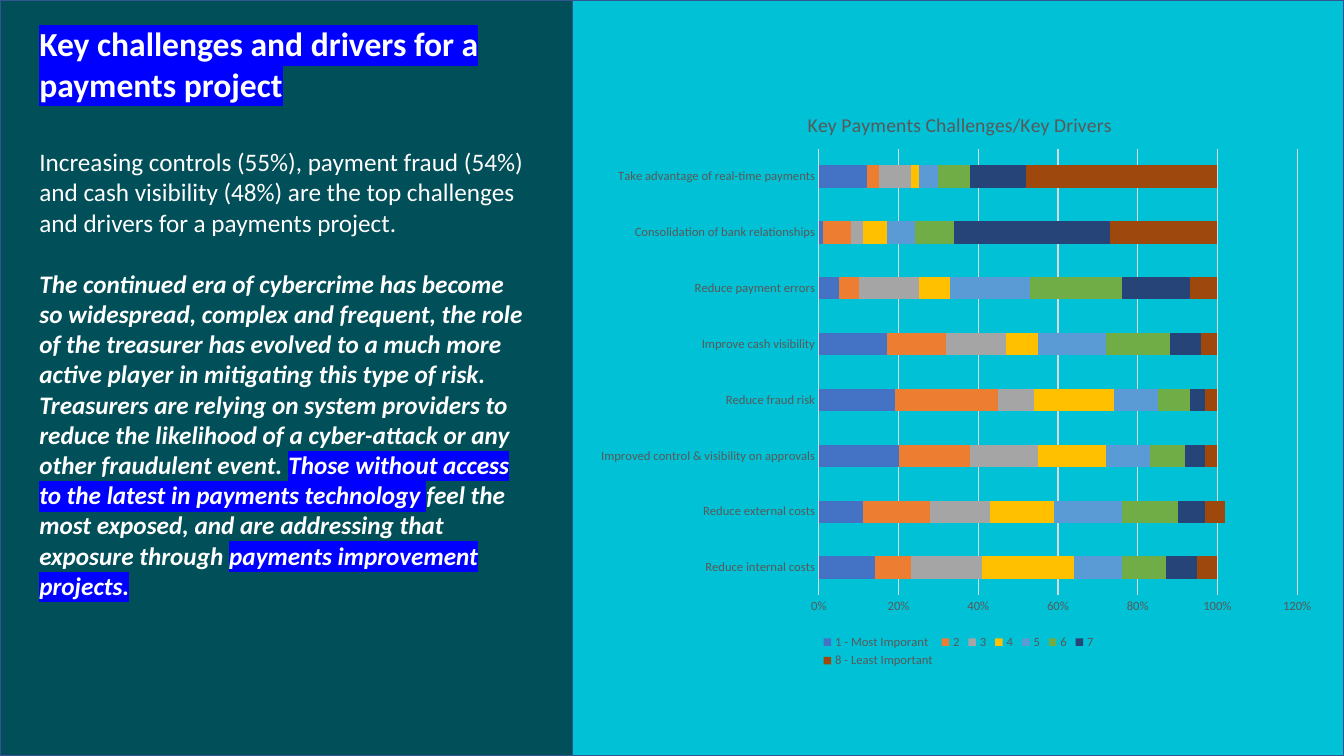
import dataclasses

import lxml.etree
import pptx
import pptx.chart.data
import pptx.dml.color
import pptx.enum.chart
import pptx.enum.shapes
import pptx.oxml.ns
import pptx.util

Pt = pptx.util.Pt
qn = pptx.oxml.ns.qn


@dataclasses.dataclass(frozen=True)
class Theme:
    font: str = "Calibri"
    white: str = "FFFFFF"
    dark_teal: str = "004F59"
    bright_teal: str = "00C1D5"
    outline: str = "325491"
    highlight: str = "0000FF"
    chart_text: str = "595959"
    chart_line: str = "D9D9D9"
    heading_size: float = 24
    body_size: float = 18
    chart_title_size: float = 14
    chart_size: float = 10
    label_size: float = 9


THEME = Theme()


@dataclasses.dataclass(frozen=True)
class Area:
    left: float
    top: float
    width: float
    height: float

    def lengths(self) -> list:
        return [Pt(value) for value in dataclasses.astuple(self)]


@dataclasses.dataclass(frozen=True)
class Span:
    text: str
    emphasis: bool = False
    marked: bool = False


@dataclasses.dataclass(frozen=True)
class Rank:
    name: str
    color: str
    shares: tuple


PANELS = [
    (Area(409, 0, 551, 540), THEME.bright_teal),
    (Area(0, 0, 409, 540), THEME.dark_teal),
]

HEADING = "Key challenges and drivers for a payments project"

BODY = [
    [Span("Increasing controls (55%), payment fraud (54%) and cash visibility (48%) "
          "are the top challenges and drivers for a payments project.")],
    [
        Span("The continued era of cybercrime has become so widespread, complex and "
             "frequent, the role of the treasurer has evolved to a much more active "
             "player in mitigating this type of risk. Treasurers are relying on system "
             "providers to reduce the likelihood of a cyber-attack or any other "
             "fraudulent event. ", emphasis=True),
        Span("Those without access to the latest in payments technology ", True, True),
        Span("feel the most exposed, and are addressing that exposure through ", True),
        Span("payments improvement projects.", True, True),
    ],
]

CHALLENGES = [
    "Reduce internal costs", "Reduce external costs",
    "Improved control & visibility on approvals", "Reduce fraud risk",
    "Improve cash visibility", "Reduce payment errors",
    "Consolidation of bank relationships", "Take advantage of real-time payments",
]

RANKS = [
    Rank("1 - Most Imporant", "4472C4", (0.14, 0.11, 0.2, 0.19, 0.17, 0.05, 0.01, 0.12)),
    Rank("2", "ED7D31", (0.09, 0.17, 0.18, 0.26, 0.15, 0.05, 0.07, 0.03)),
    Rank("3", "A5A5A5", (0.18, 0.15, 0.17, 0.09, 0.15, 0.15, 0.03, 0.08)),
    Rank("4", "FFC000", (0.23, 0.16, 0.17, 0.2, 0.08, 0.08, 0.06, 0.02)),
    Rank("5", "5B9BD5", (0.12, 0.17, 0.11, 0.11, 0.17, 0.2, 0.07, 0.05)),
    Rank("6", "70AD47", (0.11, 0.14, 0.09, 0.08, 0.16, 0.23, 0.1, 0.08)),
    Rank("7", "264478", (0.08, 0.07, 0.05, 0.04, 0.08, 0.17, 0.39, 0.14)),
    Rank("8 - Least Important", "9E480E", (0.05, 0.05, 0.03, 0.03, 0.04, 0.07, 0.27, 0.48)),
]


def rgb(color: str) -> pptx.dml.color.RGBColor:
    return pptx.dml.color.RGBColor.from_string(color)


def style_font(font, size: float, color: str) -> None:
    font.name = THEME.font
    font.size = Pt(size)
    font.color.rgb = rgb(color)


def style_line(line, color: str, width: float) -> None:
    line.color.rgb = rgb(color)
    line.width = Pt(width)


def add_panel(slide, area: Area, color: str) -> None:
    panel = slide.shapes.add_shape(
        pptx.enum.shapes.MSO_SHAPE.RECTANGLE, *area.lengths())
    panel.shadow.inherit = False
    panel.fill.solid()
    panel.fill.fore_color.rgb = rgb(color)
    style_line(panel.line, THEME.outline, 1)


def mark(run) -> None:
    """Put the highlight colour behind a run whose font colour is set."""
    fill = run.font._element.find(qn("a:solidFill"))
    highlight = lxml.etree.Element(qn("a:highlight"))
    lxml.etree.SubElement(highlight, qn("a:srgbClr"), val=THEME.highlight)
    fill.addnext(highlight)


def add_text(slide, area: Area, paragraphs: list[list[Span]], size: float,
             gap: float = 0) -> None:
    """Add a text box with a gap in points between its paragraphs."""
    frame = slide.shapes.add_textbox(*area.lengths()).text_frame
    frame.word_wrap = True
    for index, spans in enumerate(paragraphs):
        para = frame.add_paragraph() if index else frame.paragraphs[0]
        para.space_before = Pt(gap if index else 0)
        for span in spans:
            run = para.add_run()
            run.text = span.text
            style_font(run.font, size, THEME.white)
            run.font.bold = span.emphasis or span.marked
            run.font.italic = span.emphasis
            if span.marked:
                mark(run)


def place(element, area: Area, inner: bool = False) -> None:
    """Fix a chart part at fractions of the chart; titles take no size."""
    for old in element.findall(qn("c:layout")):
        element.remove(old)
    layout = lxml.etree.Element(qn("c:layout"))
    manual = lxml.etree.SubElement(layout, qn("c:manualLayout"))
    settings = [("layoutTarget", "inner")] if inner else []
    settings += [("xMode", "edge"), ("yMode", "edge"), ("x", area.left), ("y", area.top)]
    if area.width:
        settings += [("w", area.width), ("h", area.height)]
    for name, value in settings:
        lxml.etree.SubElement(manual, qn(f"c:{name}"), val=str(value))
    before = {qn("c:tx"), qn("c:legendPos"), qn("c:legendEntry")}
    element.insert(sum(child.tag in before for child in element), layout)


def style_axes(chart) -> None:
    no_tick = pptx.enum.chart.XL_TICK_MARK.NONE
    for axis in (chart.category_axis, chart.value_axis):
        axis.major_tick_mark = axis.minor_tick_mark = no_tick
        style_font(axis.tick_labels.font, THEME.label_size, THEME.chart_text)
    chart.category_axis.has_major_gridlines = False
    style_line(chart.category_axis.format.line, THEME.chart_line, 0.75)
    shares = chart.value_axis
    shares.minimum_scale, shares.maximum_scale, shares.major_unit = 0, 1.2, 0.2
    shares.tick_labels.number_format = "0%"
    shares.tick_labels.number_format_is_linked = False
    shares.format.line.fill.background()
    style_line(shares.major_gridlines.format.line, THEME.chart_line, 0.75)


def add_challenges_chart(slide, area: Area) -> None:
    data = pptx.chart.data.CategoryChartData(number_format="0%")
    data.categories = CHALLENGES
    for rank in RANKS:
        data.add_series(rank.name, rank.shares)
    chart = slide.shapes.add_chart(
        pptx.enum.chart.XL_CHART_TYPE.BAR_STACKED, *area.lengths(), data).chart
    style_font(chart.font, THEME.chart_size, THEME.chart_text)

    title = chart.chart_title.text_frame.paragraphs[0].add_run()
    title.text = "Key Payments Challenges/Key Drivers"
    style_font(title.font, THEME.chart_title_size, THEME.chart_text)
    title.font.bold = False
    place(chart.chart_title._element, Area(0.29, 0.04, 0, 0))

    plot = chart.plots[0]
    plot.gap_width, plot.overlap, plot.vary_by_categories = 150, 100, False
    for series, rank in zip(plot.series, RANKS):
        series.format.fill.solid()
        series.format.fill.fore_color.rgb = rgb(rank.color)
    style_axes(chart)
    place(plot._element.getparent(), Area(0.31, 0.11, 0.65, 0.76), inner=True)

    chart.has_legend = True
    chart.legend.position = pptx.enum.chart.XL_LEGEND_POSITION.BOTTOM
    chart.legend.include_in_layout = False
    style_font(chart.legend.font, THEME.label_size, THEME.chart_text)
    place(chart.legend._element, Area(0.31, 0.93, 0.38, 0.07))


def main() -> None:
    deck = pptx.Presentation()
    deck.slide_width, deck.slide_height = Pt(960), Pt(540)
    page = deck.slides.add_slide(deck.slide_layouts[6])
    for area, color in PANELS:
        add_panel(page, area, color)
    add_text(page, Area(21, 13, 345.6, 65.5), [[Span(HEADING, marked=True)]],
             THEME.heading_size)
    add_text(page, Area(21, 101, 366.5, 334), BODY, THEME.body_size, gap=22)
    add_challenges_chart(page, Area(422, 60, 525.6, 420))
    deck.save("out.pptx")


if __name__ == "__main__":
    main()
